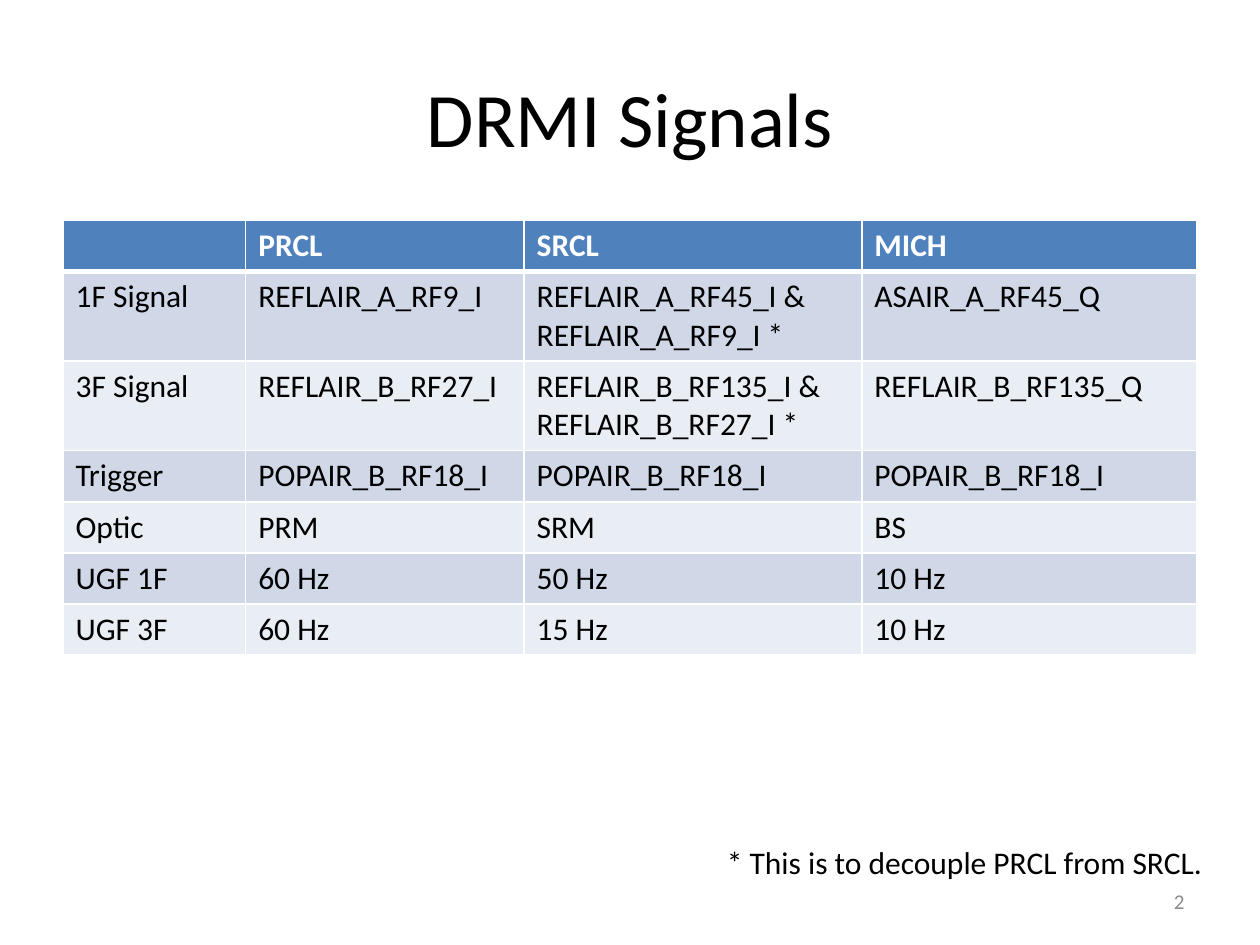
from dataclasses import dataclass

from lxml.etree import SubElement
from pptx import Presentation
from pptx.dml.color import RGBColor as Color
from pptx.enum.text import MSO_ANCHOR as Anchor, PP_ALIGN as Align
from pptx.oxml.ns import qn
from pptx.slide import Slide
from pptx.table import _Cell as Cell
from pptx.text.text import TextFrame
from pptx.util import Pt


@dataclass(frozen=True)
class Theme:
    font: str = "Calibri"
    title_size: float = 44
    body_size: float = 18
    number_size: float = 12
    text: str = "000000"
    muted: str = "8C8C8C"
    white: str = "FFFFFF"
    header: str = "4F81BD"
    bands: tuple[str, str] = ("D0D8E8", "E9EDF4")
    border: float = 1
    header_border: float = 3


@dataclass(frozen=True)
class Box:
    left: float
    top: float
    width: float
    height: float


@dataclass(frozen=True)
class Style:
    size: float
    color: str
    bold: bool = False


@dataclass(frozen=True)
class Label:
    text: str
    box: Box
    style: Style
    align: Align = Align.LEFT
    anchor: Anchor = Anchor.TOP
    wrap: bool = True


THEME = Theme()
BODY = Style(THEME.body_size, THEME.text)
HEADER = Style(THEME.body_size, THEME.white, True)

LABELS = [
    Label("DRMI Signals", Box(36, 21.6, 648, 90), Style(THEME.title_size, THEME.text),
          Align.CENTER, Anchor.MIDDLE),
    Label("* This is to decouple PRCL from SRCL.", Box(408.24, 478.08, 298.08, 29.08),
          BODY, wrap=False),
    Label("2", Box(516, 500.4, 168, 28.8), Style(THEME.number_size, THEME.muted),
          Align.RIGHT, Anchor.MIDDLE),
]

TABLE_BOX = Box(36, 126, 648, 247)
COLUMN_WIDTHS = [104.4, 159.1, 193, 191.5]
ROW_HEIGHT = 29.2
SIGNALS = [
    ["", "PRCL", "SRCL", "MICH"],
    ["1F Signal", "REFLAIR_A_RF9_I", "REFLAIR_A_RF45_I & REFLAIR_A_RF9_I *", "ASAIR_A_RF45_Q"],
    ["3F Signal", "REFLAIR_B_RF27_I", "REFLAIR_B_RF135_I &\nREFLAIR_B_RF27_I *",
     "REFLAIR_B_RF135_Q"],
    ["Trigger"] + ["POPAIR_B_RF18_I"] * 3,
    ["Optic", "PRM", "SRM", "BS"],
    ["UGF 1F", "60 Hz", "50 Hz", "10 Hz"],
    ["UGF 3F", "60 Hz", "15 Hz", "10 Hz"],
]


def write(frame: TextFrame, text: str, style: Style, align: Align = Align.LEFT) -> None:
    for index, line in enumerate(text.split("\n")):
        paragraph = frame.add_paragraph() if index else frame.paragraphs[0]
        paragraph.alignment = align
        paragraph.font.size = Pt(style.size)
        if line:
            run = paragraph.add_run()
            run.text = line
            run.font.name = THEME.font
            run.font.size = Pt(style.size)
            run.font.bold = style.bold
            run.font.color.rgb = Color.from_string(style.color)


def add_label(slide: Slide, label: Label) -> None:
    box = label.box
    shape = slide.shapes.add_textbox(Pt(box.left), Pt(box.top), Pt(box.width), Pt(box.height))
    frame = shape.text_frame
    frame.word_wrap = label.wrap
    frame.vertical_anchor = label.anchor
    write(frame, label.text, label.style, label.align)


def set_borders(cell: Cell, widths: dict[str, float]) -> None:
    properties = cell._tc.get_or_add_tcPr()
    for side, width in widths.items():
        line = SubElement(properties, qn(f"a:ln{side}"), w=str(Pt(width)))
        fill = SubElement(line, qn("a:solidFill"))
        SubElement(fill, qn("a:srgbClr"), val=THEME.white)


def add_signal_table(slide: Slide, box: Box) -> None:
    graphic = slide.shapes.add_table(len(SIGNALS), len(COLUMN_WIDTHS), Pt(box.left),
                                     Pt(box.top), Pt(box.width), Pt(box.height))
    table = graphic.table
    for column, width in zip(table.columns, COLUMN_WIDTHS):
        column.width = Pt(width)
    for index, (row, texts) in enumerate(zip(table.rows, SIGNALS)):
        row.height = Pt(ROW_HEIGHT)
        color = THEME.bands[(index - 1) % 2] if index else THEME.header
        widths = dict.fromkeys("LRTB", THEME.border)
        if index == 0:
            widths["B"] = THEME.header_border
        elif index == 1:
            widths["T"] = THEME.header_border
        for cell, text in zip(row.cells, texts):
            set_borders(cell, widths)
            cell.fill.solid()
            cell.fill.fore_color.rgb = Color.from_string(color)
            write(cell.text_frame, text, BODY if index else HEADER)
    graphic.height = Pt(box.height)


def main() -> None:
    presentation = Presentation()
    presentation.slide_width = Pt(720)
    presentation.slide_height = Pt(540)
    slide = presentation.slides.add_slide(presentation.slide_layouts[6])
    add_signal_table(slide, TABLE_BOX)
    for label in LABELS:
        add_label(slide, label)
    presentation.save("out.pptx")


if __name__ == "__main__":
    main()
